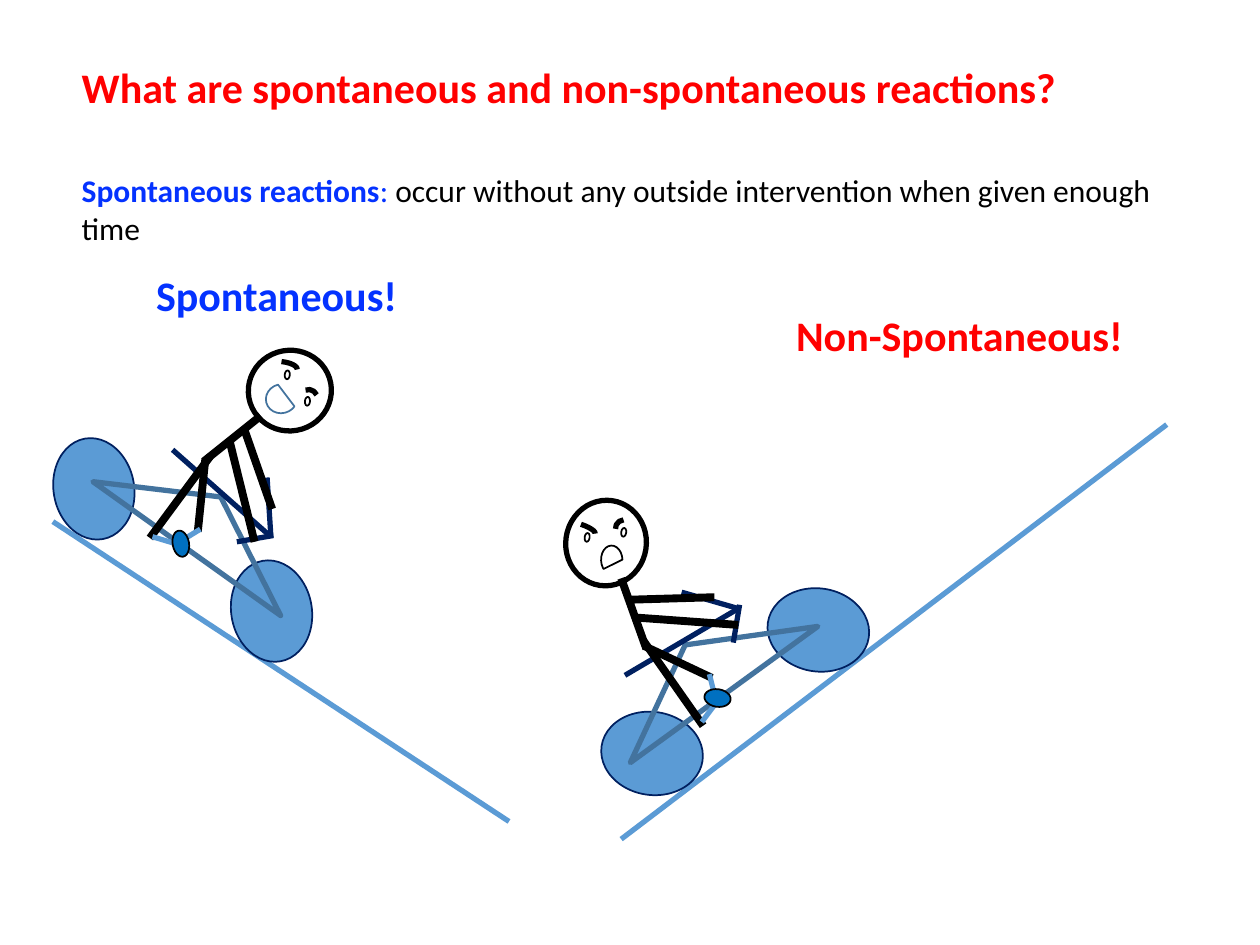
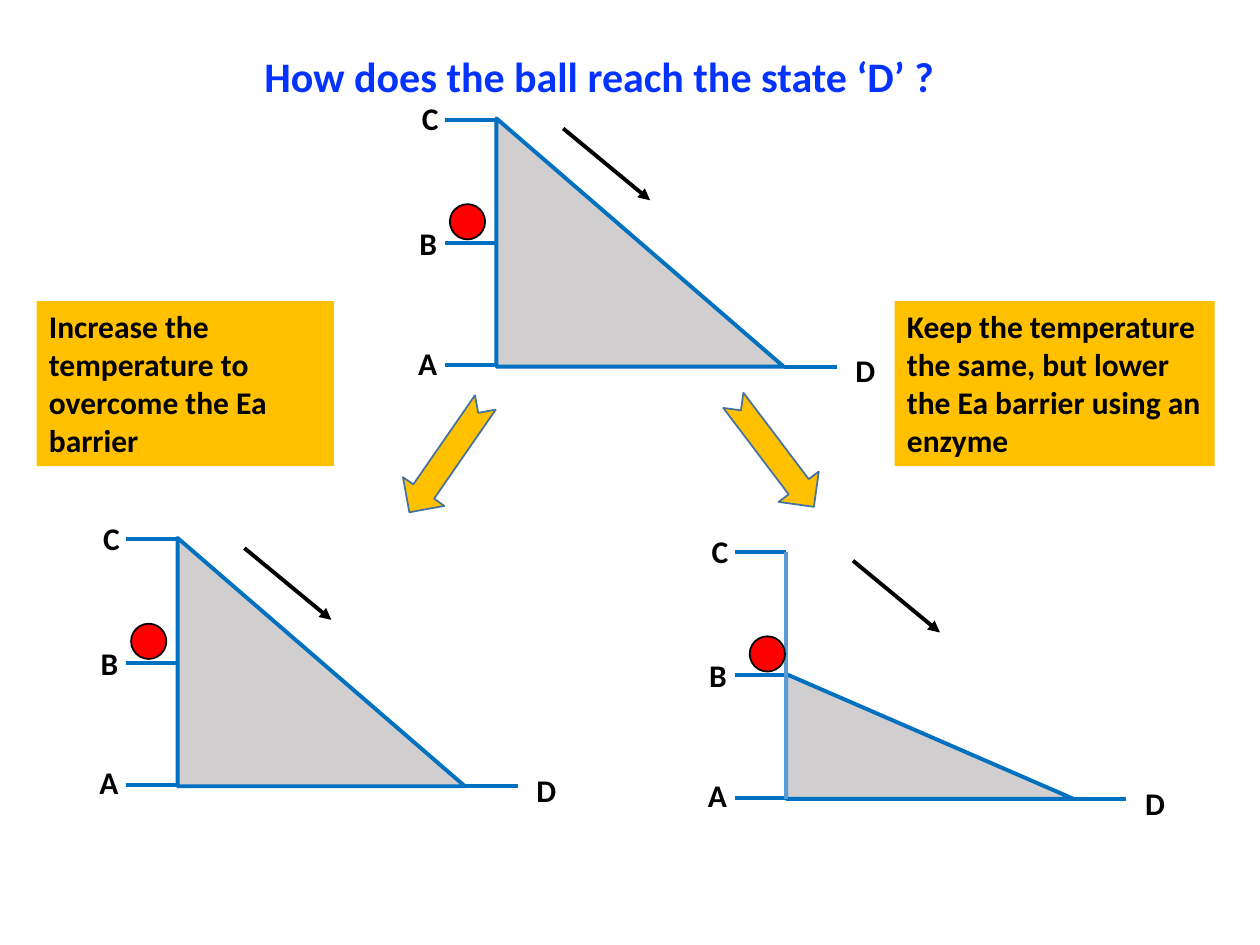
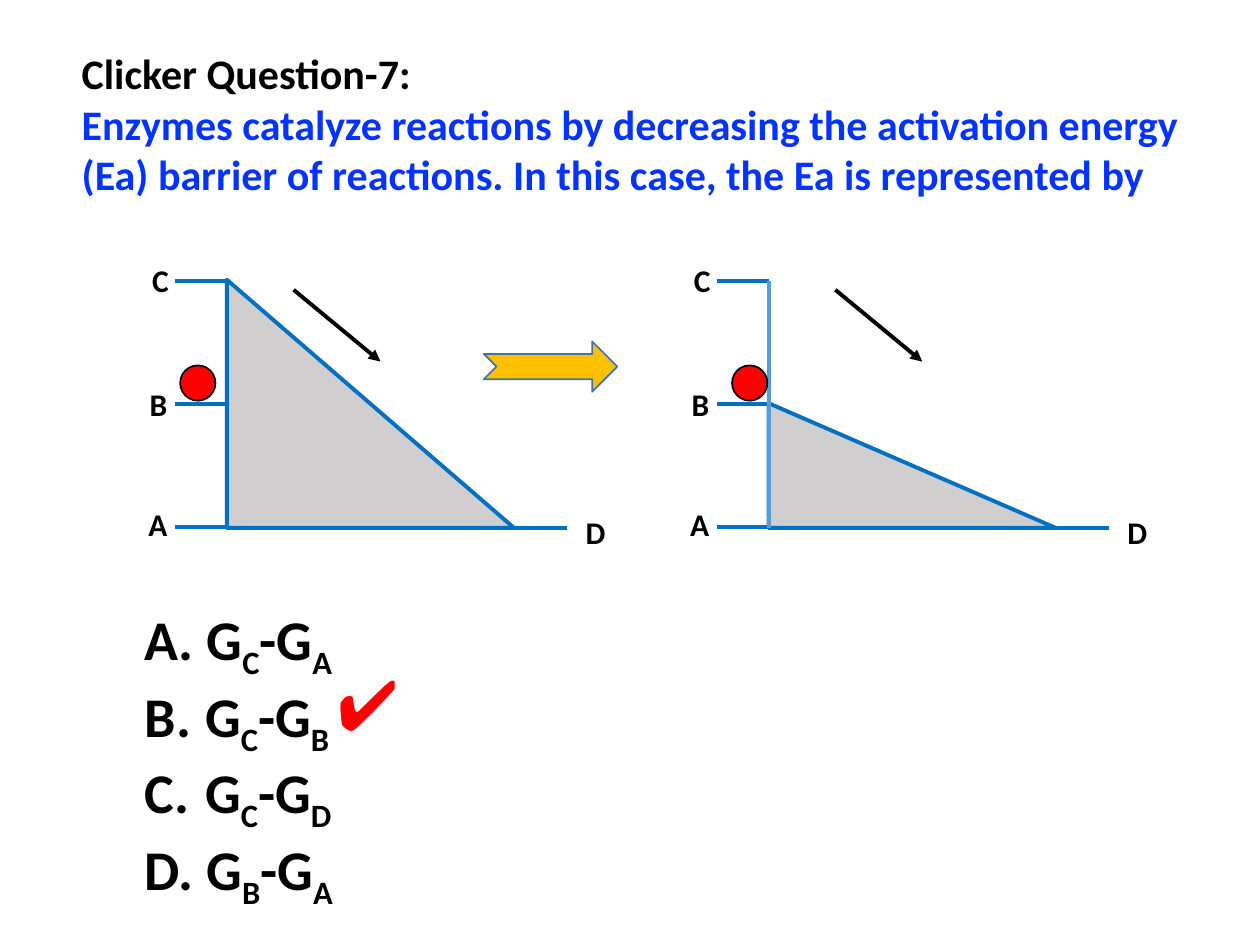
from lxml import etree
from pptx import Presentation
from pptx.dml.color import RGBColor
from pptx.enum import shapes, text
from pptx.oxml import ns

SCALE = 9144  # EMU in one px, 100 px to the inch
FONT = "Calibri"
BLACK = RGBColor(0x00, 0x00, 0x00)
RED = RGBColor(0xFF, 0x00, 0x00)
BLUE = RGBColor(0x04, 0x32, 0xFF)
SKY = RGBColor(0x5B, 0x9B, 0xD5)
STEEL = RGBColor(0x43, 0x73, 0x9E)
NAVY = RGBColor(0x00, 0x20, 0x60)
AZURE = RGBColor(0x00, 0x70, 0xC0)
GREY = RGBColor(0xD0, 0xCE, 0xCE)
GOLD = RGBColor(0xFF, 0xC0, 0x00)
KIND = shapes.MSO_SHAPE

# Rider parts from back to front: preset (None for lines), fill, line, width
PARTS = (
    [(KIND.OVAL, SKY, NAVY, 1)] * 2  # wheels
    + [(KIND.ISOSCELES_TRIANGLE, None, STEEL, 3)]  # frame
    + [(None, None, NAVY, 3)] * 3  # bars
    + [(None, None, BLACK, 4.5)] * 5  # body, legs, arms
    + [(None, None, SKY, 3)] * 2  # cranks
    + [(KIND.OVAL, AZURE, BLACK, 1)]  # pedal
    + [(KIND.OVAL, None, BLACK, 3)]  # head
    + [(KIND.ARC, None, BLACK, 3)] * 2  # brows
    + [(KIND.OVAL, None, BLACK, 1)] * 2  # eyes
)

# Lines are x1, y1, x2, y2; shapes are left, top, width, height, turn
UPHILL = [
    (477, 565, 81, 66, 8.3), (609, 467, 81, 66, 8.3), (468, 506, 184, 50, 324),
    (586, 483, 496, 536), (541, 470, 586, 483), (587, 480, 582, 510),
    (493, 459, 513, 515), (511, 509, 558, 576), (512, 513, 565, 538),
    (499, 476, 567, 474), (503, 490, 586, 496),
    (569, 557, 557, 573), (563, 535, 568, 555),
    (559, 547, 21, 14, 8.3), (449, 397, 64, 68, 8.3),
    (489, 412, 13, 14, 264.4), (447, 416, 26, 7, 18.1),
    (493, 419, 4, 7, 8.3), (464, 423, 4, 7, 8.3),
]
DOWNHILL = [
    (34, 356, 81, 64, 79.9), (175, 453, 81, 64, 79.9), (71, 391, 183, 49, 35.5),
    (215, 426, 137, 357), (212, 379, 215, 426), (217, 425, 188, 430),
    (207, 330, 162, 366), (167, 362, 119, 427), (163, 364, 157, 422),
    (194, 341, 216, 404), (182, 349, 202, 430),
    (141, 432, 121, 426), (159, 420, 141, 431),
    (133, 425, 21, 13, 79.9), (198, 277, 64, 66, 79.9),
    (239, 309, 13, 14, 335.9), (210, 287, 26, 10, 5.5),
    (242, 315, 4, 7, 5.5), (226, 294, 4, 7, 5.5),
]


def px(*nums):
    return [round(n * SCALE) for n in nums]


def pen(item, tint, width):
    item.line.color.rgb = tint
    item.line.width = round(width * 12700)


def form(home, kind, box, fill, tint, width, turn=0):
    item = home.shapes.add_shape(kind, *px(*box))
    item.shadow.inherit = False
    item.rotation = turn
    if fill is None:
        item.fill.background()
    else:
        item.fill.solid()
        item.fill.fore_color.rgb = fill
    pen(item, tint, width)
    return item


def line(home, ends, tint, width, head=False):
    item = home.shapes.add_connector(shapes.MSO_CONNECTOR.STRAIGHT, *px(*ends))
    pen(item, tint, width)
    if head:
        etree.SubElement(item.line._get_or_add_ln(), ns.qn("a:tailEnd"), type="triangle")
    etree.SubElement(item._element.spPr, ns.qn("a:effectLst"))


def write(home, box, paras, size, fill=None):
    """Each paragraph is a list of (words, format) runs."""
    item = home.shapes.add_textbox(*px(*box))
    if fill is not None:
        item.fill.solid()
        item.fill.fore_color.rgb = fill
    frame = item.text_frame
    frame.word_wrap = True
    frame.auto_size = text.MSO_AUTO_SIZE.SHAPE_TO_FIT_TEXT
    for i, runs in enumerate(paras):
        para = frame.add_paragraph() if i else frame.paragraphs[0]
        for words, extra in runs:
            run = para.add_run()
            run.text = words
            style = {"name": FONT, "size": size * 12700, "bold": True, "tint": BLACK} | extra
            run.font.color.rgb = style.pop("tint")
            base = style.pop("base", None)
            for key, value in style.items():
                setattr(run.font, key, value)
            if base:
                run.font._element.set("baseline", str(base * 1000))
    return frame


def label(home, box, words, tint=BLACK, size=24, fill=None):
    write(home, box, [[(words, {"tint": tint})]], size, fill)


def rider(slide, places, mouth, tint):
    group = slide.shapes.add_group_shape()
    for (kind, fill, edge, width), place in zip(PARTS, places):
        if kind is None:
            line(group, place, edge, width)
            continue
        item = form(group, kind, place[:4], fill, edge, width, place[4])
        if kind == KIND.ISOSCELES_TRIANGLE:
            item.adjustments[0] = 0.49
    form(group, KIND.CHORD, mouth[:4], None, tint, 1, mouth[4])


def ramp(slide, x, y, low=False):
    """Hill with levels A to D; a low hill starts at level B."""
    group = slide.shapes.add_group_shape()
    drop = 98 if low else 0
    form(group, KIND.RIGHT_TRIANGLE, (x, y + drop, 228, 197 - drop), GREY, AZURE, 2.25)
    for level in (1, 99, 196):
        line(group, (x - 41, y + level, x, y + level), AZURE, 2.25)
    line(group, (x + 228, y + 197, x + 270, y + 197), AZURE, 2.25)
    for name, dx, dy in (("D", 275, 180), ("A", -72, 174), ("B", -71, 79), ("C", -69, -20)):
        label(group, (x + dx, y + dy, 36, 40), name, size=18)
    line(group, (x + 53, y + 8, x + 122, y + 65), BLACK, 2.25, head=True)
    if low:
        line(group, (x, y + 197, x, y + 1), SKY, 2.25)
    form(group, KIND.OVAL, (x - (29 if low else 37), y + 68, 28, 28), RED, BLACK, 1)


def arrow(slide, x, y, turn=0):
    form(slide, KIND.NOTCHED_RIGHT_ARROW, (x, y, 106, 40), GOLD, STEEL, 1, turn)


def options(slide, box, pairs):
    low = {"base": -25}
    paras = [[(" G", {}), (a, low), ("-G", {}), (b, low)] for a, b in pairs]
    for para in write(slide, box, paras, 32).paragraphs:
        props = para._p.get_or_add_pPr()
        props.set("marL", str(38 * SCALE))
        props.set("indent", str(-38 * SCALE))
        etree.SubElement(props, ns.qn("a:buFont"), typeface="+mj-lt")
        etree.SubElement(props, ns.qn("a:buAutoNum"), type="alphaUcPeriod")


def bikes(slide):
    write(slide, (55, 131, 869, 71), [[
        ("Spontaneous reactions", {"tint": BLUE}),
        (": ", {"tint": BLUE, "bold": False}),
        ("occur without any outside intervention when given enough time", {"bold": False}),
    ]], 18)
    label(slide, (55, 44, 869, 50), "What are spontaneous and non-spontaneous reactions?", RED)
    label(slide, (114, 209, 290, 50), "Spontaneous!", BLUE)
    label(slide, (622, 241, 290, 50), "Non-Spontaneous!", RED)
    line(slide, (926, 337, 493, 666), SKY, 3)
    rider(slide, UPHILL, (474, 436, 23, 17, 87.7), BLACK)
    line(slide, (42, 414, 404, 652), SKY, 3)
    rider(slide, DOWNHILL, (211, 305, 25, 23, 345.8), STEEL)


def paths(slide):
    ramp(slide, 394, 94)
    label(slide, (200, 35, 576, 50), "How does the ball reach the state ‘D’ ?", BLUE)
    ramp(slide, 624, 437, low=True)
    ramp(slide, 141, 427)
    arrow(slide, 302, 343, 124.7)
    arrow(slide, 561, 340, 52.9)
    label(slide, (29, 239, 236, 131),
          "Increase the temperature to overcome the Ea barrier", size=18, fill=GOLD)
    label(slide, (710, 239, 254, 131),
          "Keep the temperature the same, but lower the Ea barrier using an enzyme",
          size=18, fill=GOLD)


def quiz(slide):
    ramp(slide, 180, 222)
    write(slide, (55, 33, 905, 131), [
        [("Clicker Question-7:", {})],
        [("Enzymes catalyze reactions by decreasing the activation energy (Ea) barrier "
          "of reactions. In this case, the Ea is represented by", {"tint": BLUE})],
    ], 24)
    ramp(slide, 610, 222, low=True)
    arrow(slide, 384, 271)
    options(slide, (105, 475, 255, 226), ("CA", "CB", "CD", "BA"))
    write(slide, (258, 519, 136, 77), [[("✔", {"tint": RED, "bold": False})]], 40)


def main():
    deck = Presentation()
    deck.slide_width, deck.slide_height = px(1000, 750)
    for build in (bikes, paths, quiz):
        build(deck.slides.add_slide(deck.slide_layouts[6]))
    deck.save("out.pptx")


if __name__ == "__main__":
    main()
